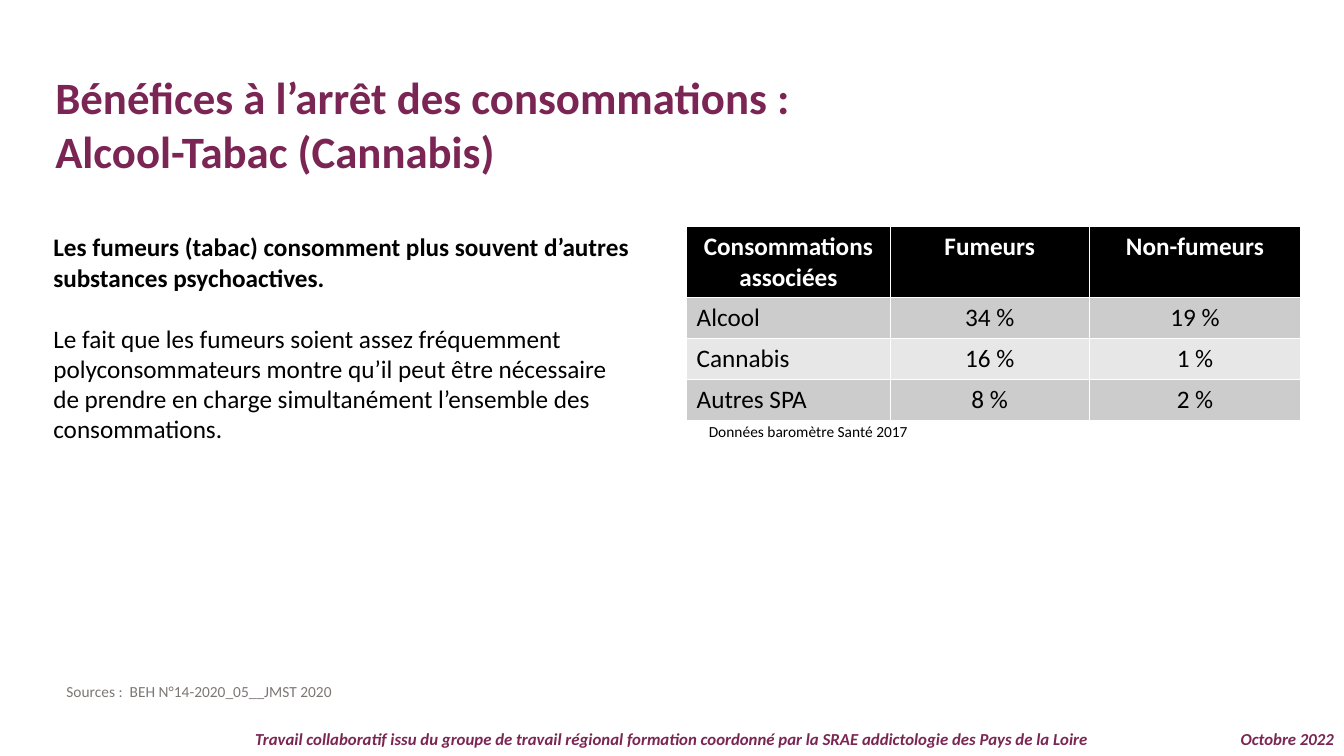
from pptx import Presentation
from pptx import util as u
from pptx.dml.color import RGBColor
from pptx.enum import text

PLUM, BLACK, WHITE, GREY = "7A2553", "000000", "FFFFFF", "7C7775"
BANDS = ["CCCCCC", "E7E7E7"]
LEFT, CENTER, RIGHT = text.PP_ALIGN.LEFT, text.PP_ALIGN.CENTER, text.PP_ALIGN.RIGHT


def rgb(value):
    return RGBColor.from_string(value)


class SlideBuilder:
    font = "Calibri"

    def __init__(self, deck):
        self.deck = deck
        self.page = deck.slides.add_slide(deck.slide_layouts[6])

    def across(self, percent):
        return round(self.deck.slide_width * percent / 100)

    def down(self, percent):
        return round(self.deck.slide_height * percent / 100)

    def place(self, left, top, width, height):
        return self.across(left), self.down(top), self.across(width), self.down(height)

    def fill_lines(self, frame, lines, size, color, bold=False, italic=False, align=LEFT):
        for index, line in enumerate(lines):
            para = frame.paragraphs[0] if index == 0 else frame.add_paragraph()
            para.text = line
            para.alignment = align
            para.font.name = self.font
            para.font.size = u.Pt(size)
            para.font.color.rgb = rgb(color)
            para.font.bold = bold
            para.font.italic = italic
        return frame.paragraphs

    def text_box(self, area, lines, size, color, **style):
        box = self.page.shapes.add_textbox(*self.place(*area))
        box.text_frame.word_wrap = True
        return self.fill_lines(box.text_frame, lines, size, color, **style)

    def footer(self, area, line, align):
        para, = self.text_box(area, [line], 12, PLUM, bold=True, italic=True, align=align)
        para.line_spacing = 0.9

    def table(self, left, top, widths, heights, rows, size):
        area = self.place(left, top, sum(widths), sum(heights))
        table = self.page.shapes.add_table(len(rows), len(widths), *area).table
        for column, width in zip(table.columns, widths):
            column.width = self.across(width)
        for row, height in zip(table.rows, heights):
            row.height = self.down(height)
        for r, values in enumerate(rows):
            header = r == 0
            for c, value in enumerate(values):
                cell = table.cell(r, c)
                cell.fill.solid()
                cell.fill.fore_color.rgb = rgb(BLACK if header else BANDS[(r - 1) % 2])
                self.fill_lines(cell.text_frame, value.split("\n"), size,
                                WHITE if header else BLACK, bold=header,
                                align=CENTER if header or c else LEFT)


def main():
    deck = Presentation()
    deck.slide_width, deck.slide_height = u.Inches(13.33), u.Inches(7.5)
    slide = SlideBuilder(deck)

    slide.footer((0, 96, 100, 4),
                 "Travail collaboratif issu du groupe de travail régional formation "
                 "coordonné par la SRAE addictologie des Pays de la Loire", CENTER)
    slide.footer((89.2, 96, 10.8, 4), "Octobre 2022", RIGHT)

    slide.text_box((3.38, 8.53, 96.6, 15.73),
                   ["Bénéfices à l’arrêt des consommations :", "Alcool-Tabac (Cannabis)"],
                   32, PLUM, bold=True)

    finding, advice = slide.text_box(
        (3.23, 30, 44.8, 29.6),
        ["Les fumeurs (tabac) consomment plus souvent d’autres substances psychoactives.",
         "Le fait que les fumeurs soient assez fréquemment polyconsommateurs montre "
         "qu’il peut être nécessaire de prendre en charge simultanément l’ensemble "
         "des consommations."],
        18, BLACK)
    finding.font.bold = True
    advice.space_before = u.Pt(22)

    slide.text_box((4.2, 89.6, 89.5, 3.87),
                   ["Sources :  BEH N°14-2020_05__JMST 2020"], 11, GREY)

    slide.table(51.09, 30, [15.15, 14.8, 15.75], [9.2] + [5.45] * 3,
                [["Consommations\nassociées", "Fumeurs", "Non-fumeurs"],
                 ["Alcool", "34 %", "19 %"],
                 ["Cannabis", "16 %", "1 %"],
                 ["Autres SPA", "8 %", "2 %"]], 18)
    slide.text_box((52, 55.2, 35.26, 3.87), ["Données baromètre Santé 2017"], 11, BLACK)

    deck.save("out.pptx")


if __name__ == "__main__":
    main()
